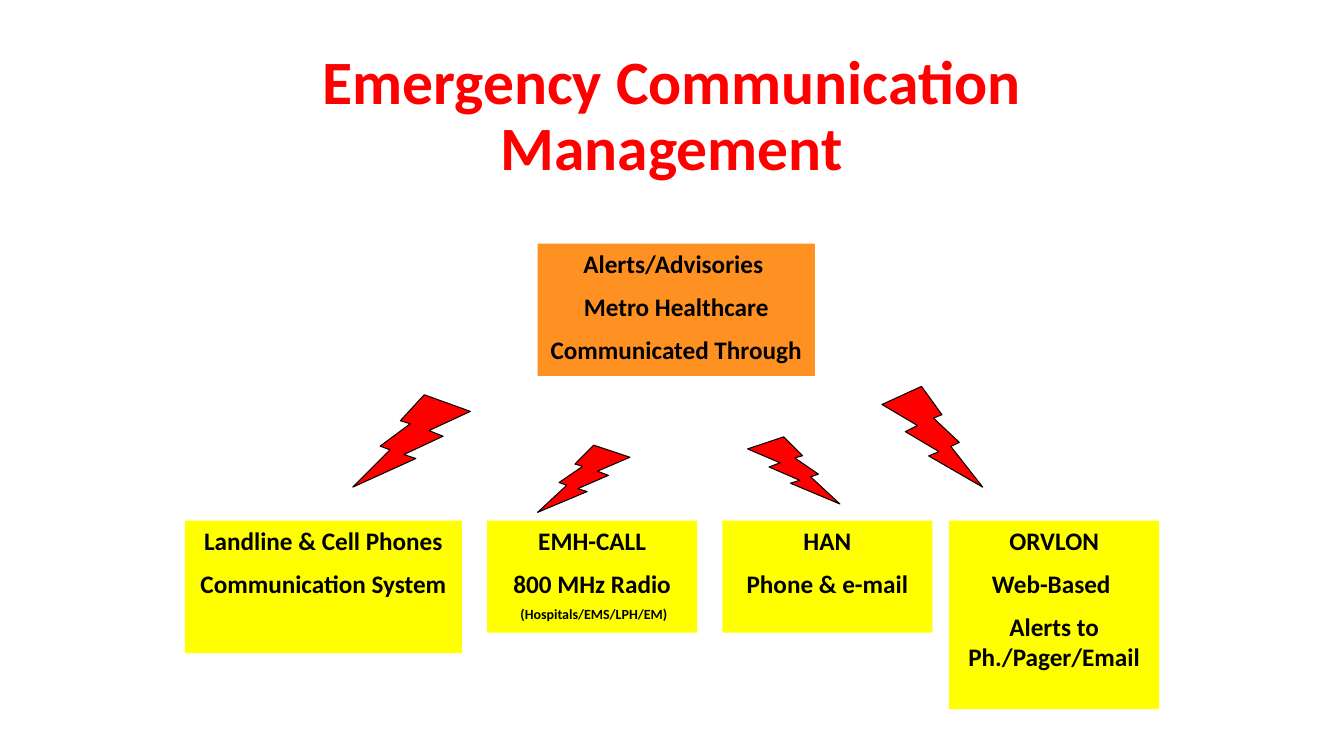
"""Build the emergency communication management slide."""
from dataclasses import dataclass
from typing import NamedTuple, Optional

from pptx import Presentation
from pptx.dml.color import RGBColor
from pptx.enum.shapes import MSO_SHAPE as Preset
from pptx.enum.text import MSO_ANCHOR as Anchor, MSO_AUTO_SIZE as AutoSize, PP_ALIGN as Align
from pptx.shapes.autoshape import Shape
from pptx.slide import Slide
from pptx.util import Pt


@dataclass(frozen=True)
class Theme:
    font: str = "Calibri"
    red: str = "FF0000"
    orange: str = "FF9123"
    yellow: str = "FFFF00"
    black: str = "000000"
    title_size: int = 44
    body_size: int = 18
    note_size: int = 10


class Frame(NamedTuple):
    left: float
    top: float
    width: float
    height: float


class Line(NamedTuple):
    text: str
    size: int


class Box(NamedTuple):
    frame: Frame
    fill: str
    lines: list[Line]


class Bolt(NamedTuple):
    frame: Frame
    flipped: bool


THEME = Theme()
CHANNEL_TOP = 372
TITLE = Frame(174, 30, 612, 108)


def body(*texts: str) -> list[Line]:
    return [Line(text, THEME.body_size) for text in texts]


BOXES = [
    Box(Frame(384, 174, 198, 94.5), THEME.orange,
        body("Alerts/Advisories ", "Metro Healthcare", "Communicated Through")),
    Box(Frame(132, CHANNEL_TOP, 198, 94.5), THEME.yellow,
        body("Landline & Cell Phones", "Communication System")),
    Box(Frame(348, CHANNEL_TOP, 150, 80), THEME.yellow,
        body("EMH-CALL", "800 MHz Radio") + [Line(" (Hospitals/EMS/LPH/EM)", THEME.note_size)]),
    Box(Frame(516, CHANNEL_TOP, 150, 80), THEME.yellow,
        body("HAN", "Phone & e-mail")),
    Box(Frame(678, CHANNEL_TOP, 150, 134.6), THEME.yellow,
        body("ORVLON", "Web-Based ", "Alerts to Ph./Pager/Email")),
]
BOLTS = [
    Bolt(Frame(630, 276, 72, 72), False),
    Bolt(Frame(252, 282, 84, 66), True),
    Bolt(Frame(384, 318, 66, 48), True),
    Bolt(Frame(534, 312, 66, 48), False),
]


def write_text(shape: Shape, lines: list[Line], *, color: str, anchor: Anchor,
               line_spacing: Optional[float] = None) -> None:
    text_frame = shape.text_frame
    text_frame.word_wrap = True
    text_frame.auto_size = AutoSize.NONE
    text_frame.vertical_anchor = anchor
    for index, line in enumerate(lines):
        paragraph = text_frame.add_paragraph() if index else text_frame.paragraphs[0]
        paragraph.alignment = Align.CENTER
        paragraph.space_before = Pt(line.size / 2 if index else 0)
        paragraph.line_spacing = line_spacing
        run = paragraph.add_run()
        run.text = line.text
        run.font.name = THEME.font
        run.font.size = Pt(line.size)
        run.font.bold = True
        run.font.color.rgb = RGBColor.from_string(color)


def add_preset(slide: Slide, preset: Preset, frame: Frame, fill: str,
               outline: Optional[str] = None) -> Shape:
    shape = slide.shapes.add_shape(preset, *map(Pt, frame))
    shape.shadow.inherit = False
    shape.fill.solid()
    shape.fill.fore_color.rgb = RGBColor.from_string(fill)
    if outline:
        shape.line.color.rgb = RGBColor.from_string(outline)
        shape.line.width = Pt(0.75)
    else:
        shape.line.fill.background()
    return shape


def add_title(slide: Slide) -> None:
    title = slide.shapes.title
    title.left, title.top, title.width, title.height = map(Pt, TITLE)
    write_text(title, [Line("Emergency Communication Management", THEME.title_size)],
               color=THEME.red, anchor=Anchor.MIDDLE, line_spacing=0.9)


def add_box(slide: Slide, box: Box) -> None:
    shape = add_preset(slide, Preset.RECTANGLE, box.frame, box.fill)
    write_text(shape, box.lines, color=THEME.black, anchor=Anchor.TOP)


def add_bolt(slide: Slide, bolt: Bolt) -> None:
    shape = add_preset(slide, Preset.LIGHTNING_BOLT, bolt.frame, THEME.red, THEME.black)
    if bolt.flipped:
        shape._element.spPr.xfrm.set("flipH", "1")


def main() -> None:
    presentation = Presentation()
    presentation.slide_width, presentation.slide_height = Pt(960), Pt(540)
    slide = presentation.slides.add_slide(presentation.slide_layouts[5])
    add_title(slide)
    for box in BOXES:
        add_box(slide, box)
    for bolt in BOLTS:
        add_bolt(slide, bolt)
    presentation.save("out.pptx")


if __name__ == "__main__":
    main()
